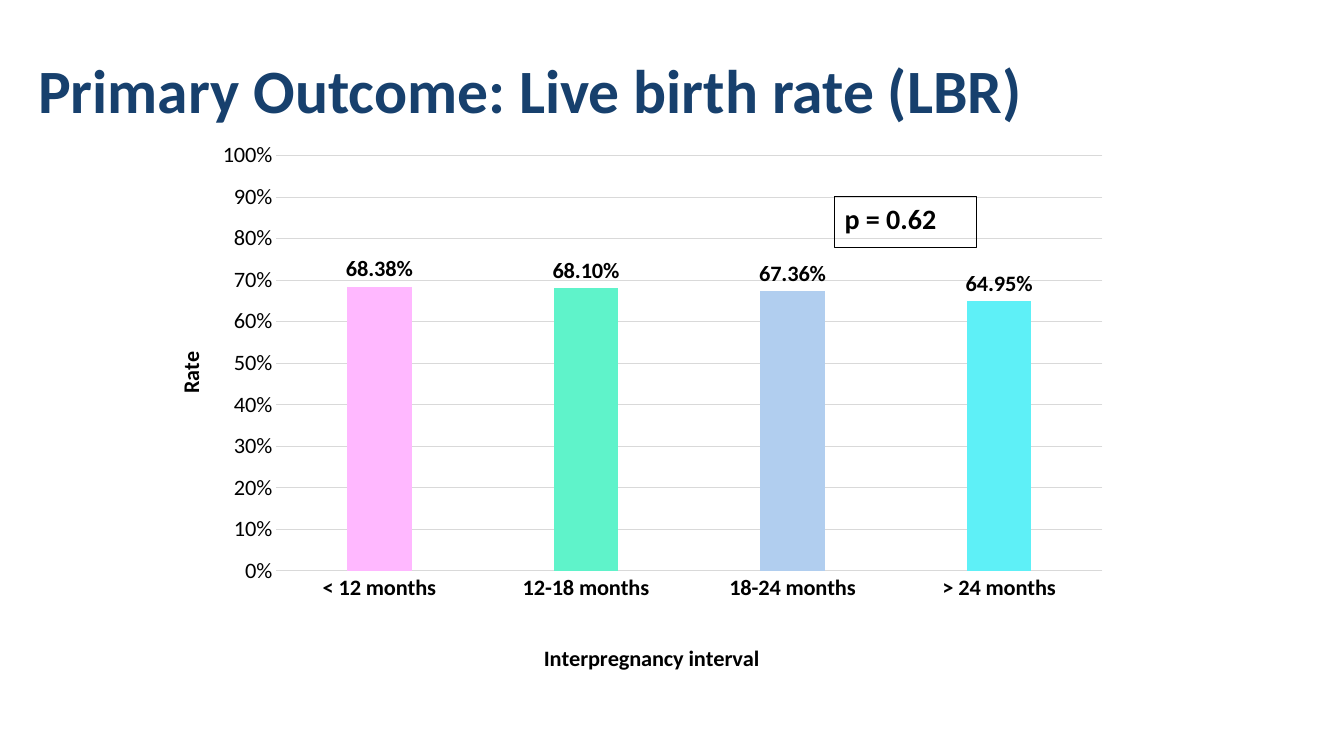
from lxml.etree import SubElement
from pptx import Presentation
from pptx.chart.data import CategoryChartData
from pptx.dml.color import RGBColor
from pptx.enum.chart import XL_CHART_TYPE as ChartType
from pptx.enum.chart import XL_LABEL_POSITION as LabelPosition
from pptx.enum.chart import XL_TICK_MARK as TickMark
from pptx.enum.shapes import MSO_SHAPE as Shape
from pptx.enum.text import MSO_ANCHOR as Anchor
from pptx.enum.text import PP_ALIGN as Align
from pptx.oxml import parse_xml
from pptx.oxml.ns import nsdecls, qn
from pptx.util import Pt

RATES = {
    "< 12 months": (0.6838, "FFB8FF"),
    "12-18 months": (0.681, "5FF3CA"),
    "18-24 months": (0.6736, "B1CEEF"),
    "> 24 months": (0.6495, "5EF0F7"),
}


def color(value):
    return RGBColor.from_string(value)


def place(element, **fractions):
    """Fix a chart part at fractions of the chart's width and height."""
    layout = element.find(qn("c:layout"))
    if layout is None:
        layout = parse_xml(f"<c:layout {nsdecls('c')}/>")
        element.insert(0, layout)
    manual = SubElement(layout, qn("c:manualLayout"))
    if "w" in fractions:
        SubElement(manual, qn("c:layoutTarget")).set("val", "inner")
    for mode in ("xMode", "yMode"):
        SubElement(manual, qn(f"c:{mode}")).set("val", "edge")
    for name, fraction in fractions.items():
        SubElement(manual, qn(f"c:{name}")).set("val", str(fraction))


class SlideBuilder:
    font_name = "Calibri"
    ink = "000000"
    rule = "D9D9D9"

    def __init__(self, page):
        self.page = page

    def style(self, font, size, bold=False, ink=None):
        font.name = self.font_name
        font.size = Pt(size)
        font.bold = bold
        font.color.rgb = color(ink or self.ink)

    def outline(self, line, ink):
        line.color.rgb = color(ink)
        line.width = Pt(0.75)

    def title(self, text, bounds):
        box = self.page.shapes.add_textbox(*map(Pt, bounds))
        frame = box.text_frame
        frame.word_wrap = True
        frame.vertical_anchor = Anchor.MIDDLE
        para = frame.paragraphs[0]
        para.text = text
        para.line_spacing = 0.9
        self.style(para.font, 44, True, "17406D")

    def framed_note(self, text, bounds):
        box = self.page.shapes.add_shape(Shape.RECTANGLE, *map(Pt, bounds))
        box.shadow.inherit = False
        box.fill.background()
        self.outline(box.line, self.ink)
        frame = box.text_frame
        frame.vertical_anchor = Anchor.TOP
        para = frame.paragraphs[0]
        para.text = text
        para.alignment = Align.LEFT
        self.style(para.font, 20, True)

    def axis(self, axis, title, x, y, bold):
        axis.major_tick_mark = axis.minor_tick_mark = TickMark.NONE
        self.style(axis.tick_labels.font, 16, bold)
        para = axis.axis_title.text_frame.paragraphs[0]
        para.text = title
        self.style(para.font, 16, True)
        place(axis.axis_title._element, x=x, y=y)

    def rate_chart(self, rates, bounds):
        data = CategoryChartData(number_format="0.00%")
        data.categories = list(rates)
        data.add_series("Series 1", [rate for rate, _ in rates.values()])
        chart = self.page.shapes.add_chart(
            ChartType.COLUMN_CLUSTERED, *map(Pt, bounds), data
        ).chart
        chart.has_legend = chart.has_title = False
        self.style(chart.font, 10)
        place(chart._chartSpace.chart.plotArea, x=0.134, y=0.044, w=0.846, h=0.771)

        months, percent = chart.category_axis, chart.value_axis
        self.axis(months, "Interpregnancy interval", 0.404, 0.942, True)
        self.outline(months.format.line, self.rule)
        self.axis(percent, "Rate", 0.027, 0.402, False)
        percent.format.line.fill.background()
        self.outline(percent.major_gridlines.format.line, self.rule)
        percent.minimum_scale, percent.maximum_scale = 0, 1
        percent.major_unit = 0.1
        percent.tick_labels.number_format = "0%"
        percent.tick_labels.number_format_is_linked = False

        plot = chart.plots[0]
        plot.vary_by_categories = False
        plot.gap_width, plot.overlap = 219, -27
        series = plot.series[0]
        series.format.fill.solid()
        series.format.fill.fore_color.rgb = color("0F6FC6")
        for index, (_, fill) in enumerate(rates.values()):
            bar = series.points[index].format.fill
            bar.solid()
            bar.fore_color.rgb = color(fill)
        labels = series.data_labels
        labels.show_value = True
        labels.position = LabelPosition.OUTSIDE_END
        labels.number_format = "0.00%"
        labels.number_format_is_linked = False
        self.style(labels.font, 16, True)


def main():
    deck = Presentation()
    deck.slide_width, deck.slide_height = Pt(960), Pt(540)
    builder = SlideBuilder(deck.slides.add_slide(deck.slide_layouts[6]))
    builder.title("Primary Outcome: Live birth rate (LBR)", (20.2, 23.8, 864, 86.4))
    builder.rate_chart(RATES, (103.7, 94.3, 697.7, 391))
    builder.framed_note("p = 0.62", (596.2, 140.4, 101.5, 36.7))
    deck.save("out.pptx")


if __name__ == "__main__":
    main()
